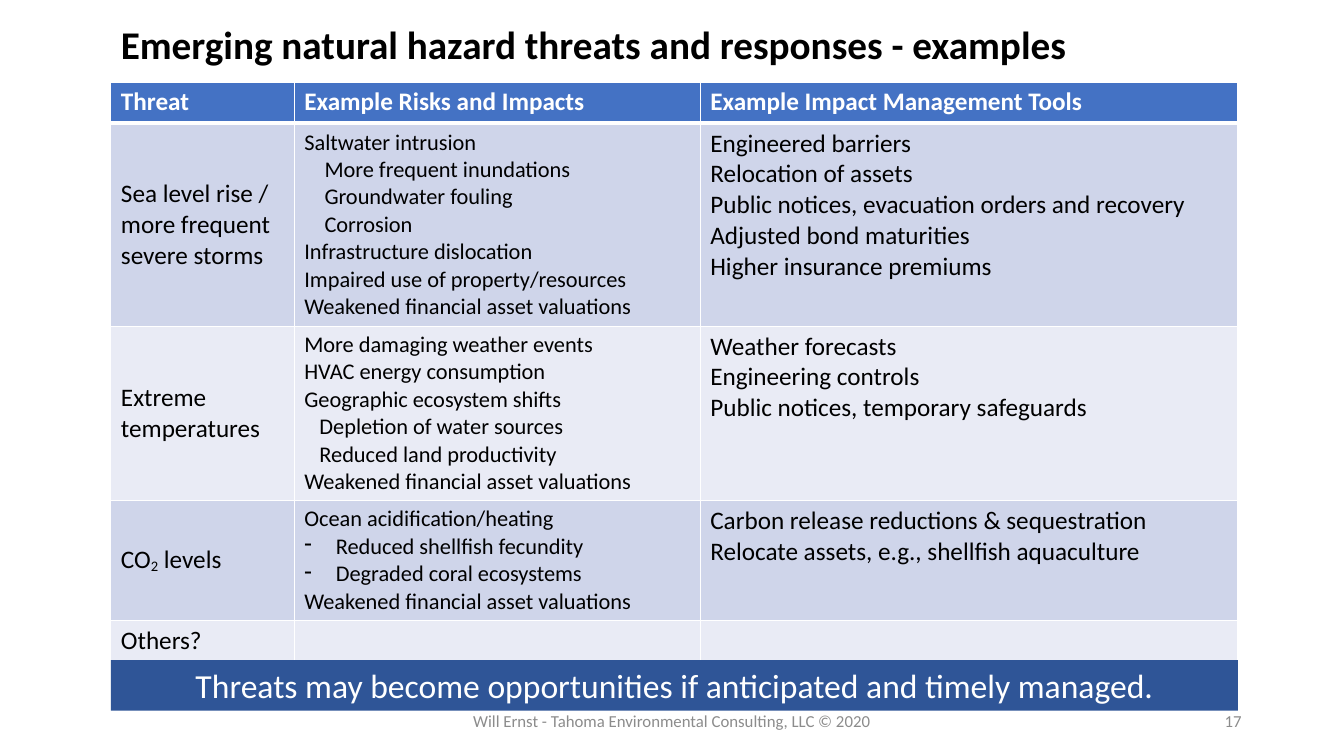
from lxml import etree
from pptx import Presentation
from pptx import util as u
from pptx.dml.color import RGBColor
from pptx.enum import shapes, text
from pptx.oxml import ns

COLORS = {
    "black": "000000", "white": "FFFFFF", "header": "4472C4",
    "band_dark": "CFD5EA", "band_light": "E9EBF5",
    "banner": "2F5597", "footer": "8C8C8C",
}
FONT = "Calibri"
LEFT, TABLE_WIDTH = 79.2, 805
COLUMN_WIDTHS = [131, 290, 384]
ROW_HEIGHTS = [29.5, 145, 124.5, 85.5, 29.5]
HEADINGS = ["Threat", "Example Risks and Impacts", "Example Impact Management Tools"]

# Each row: threat, risks, tools; a tuple gives text and paragraph format
ROWS = [
    (["Sea level rise / more frequent severe storms"],
     ["Saltwater intrusion",
      ("More frequent inundations", {"left": 14.4}),
      ("Groundwater fouling", {"left": 14.4}),
      ("Corrosion", {"left": 14.4}),
      "Infrastructure dislocation", "Impaired use of property/resources",
      "Weakened financial asset valuations"],
     ["Engineered barriers", "Relocation of assets",
      "Public notices, evacuation orders and recovery",
      "Adjusted bond maturities", "Higher insurance premiums"]),
    (["Extreme temperatures"],
     ["More damaging weather events", "HVAC energy consumption",
      "Geographic ecosystem shifts",
      ("Depletion of water sources", {"left": 10.8}),
      ("Reduced land productivity", {"left": 10.8}),
      "Weakened financial asset valuations"],
     ["Weather forecasts", "Engineering controls",
      "Public notices, temporary safeguards"]),
    ([("CO", {"subscript": "2", "rest": " levels"})],
     ["Ocean acidification/heating",
      ("Reduced shellfish fecundity", {"left": 22.5, "bullet": "-"}),
      ("Degraded coral ecosystems", {"left": 22.5, "bullet": "-"}),
      "Weakened financial asset valuations"],
     ["Carbon release reductions & sequestration",
      "Relocate assets, e.g., shellfish aquaculture"]),
    (["Others?"], [], []),
]


def rgb(name):
    return RGBColor.from_string(COLORS[name])


def write(paragraph, content, size=18, color="black", bold=False, align=None,
          left=0, bullet=None, subscript="", rest=""):
    """Write formatted text into a paragraph."""
    properties = paragraph._p.get_or_add_pPr()
    if left:
        properties.set("marL", str(u.Pt(left)))
        properties.set("indent", str(-u.Pt(left) if bullet else 0))
    if bullet:
        etree.SubElement(properties, ns.qn("a:buChar"), char=bullet)
    if align is not None:
        paragraph.alignment = align
    for part in filter(None, (content, subscript, rest)):
        run = paragraph.add_run()
        run.text = part
        run.font.name, run.font.size, run.font.bold = FONT, u.Pt(size), bold
        run.font.color.rgb = rgb(color)
        if part == subscript:
            run._r.get_or_add_rPr().set("baseline", "-11000")


def add_text_box(slide, left, top, width, height, content, **text_format):
    box = slide.shapes.add_textbox(u.Pt(left), u.Pt(top), u.Pt(width), u.Pt(height))
    frame = box.text_frame
    frame.word_wrap = True
    frame.vertical_anchor = text.MSO_ANCHOR.MIDDLE
    write(frame.paragraphs[0], content, **text_format)
    return box


def add_banner(slide, left, top, width, height, content):
    banner = slide.shapes.add_shape(shapes.MSO_SHAPE.RECTANGLE, u.Pt(left), u.Pt(top),
                                    u.Pt(width), u.Pt(height))
    banner.shadow.inherit = False
    banner.fill.solid()
    banner.fill.fore_color.rgb = rgb("banner")
    banner.line.fill.background()
    frame = banner.text_frame
    frame.word_wrap = True
    frame.vertical_anchor = text.MSO_ANCHOR.TOP
    write(frame.paragraphs[0], content, size=24, color="white",
          align=text.PP_ALIGN.CENTER)


def set_borders(cell, bottom):
    """Give a cell white borders; bottom is the width of the lower one."""
    properties = cell._tc.get_or_add_tcPr()
    for side, width in (("L", 1), ("R", 1), ("T", 1), ("B", bottom)):
        line = etree.SubElement(properties, ns.qn("a:ln" + side), w=str(u.Pt(width)))
        fill = etree.SubElement(line, ns.qn("a:solidFill"))
        etree.SubElement(fill, ns.qn("a:srgbClr"), val=COLORS["white"])


def fill_cell(cell, items, fill, anchor, bottom=1, **text_format):
    set_borders(cell, bottom)
    cell.fill.solid()
    cell.fill.fore_color.rgb = rgb(fill)
    cell.vertical_anchor = anchor
    frame = cell.text_frame
    for index, item in enumerate(items):
        content, extra = item if isinstance(item, tuple) else (item, {})
        paragraph = frame.add_paragraph() if index else frame.paragraphs[0]
        write(paragraph, content, **text_format, **extra)


def add_threat_table(slide):
    table = slide.shapes.add_table(len(ROW_HEIGHTS), len(COLUMN_WIDTHS), u.Pt(LEFT),
                                   u.Pt(58.5), u.Pt(TABLE_WIDTH),
                                   u.Pt(sum(ROW_HEIGHTS))).table
    for column, width in zip(table.columns, COLUMN_WIDTHS):
        column.width = u.Pt(width)
    for row, height in zip(table.rows, ROW_HEIGHTS):
        row.height = u.Pt(height)

    # Header row
    top, middle = text.MSO_ANCHOR.TOP, text.MSO_ANCHOR.MIDDLE
    for column, heading in enumerate(HEADINGS):
        fill_cell(table.cell(0, column), [heading], "header", top, bottom=3,
                  color="white", bold=True)

    # Banded body rows
    for row, cells in enumerate(ROWS, start=1):
        fill = "band_dark" if row % 2 else "band_light"
        for column, items in enumerate(cells):
            fill_cell(table.cell(row, column), items, fill,
                      top if column == 2 else middle, size=16 if column == 1 else 18)


def main():
    presentation = Presentation()
    presentation.slide_width, presentation.slide_height = u.Pt(960), u.Pt(540)
    slide = presentation.slides.add_slide(presentation.slide_layouts[6])

    # Title
    title = add_text_box(slide, LEFT, 11.5, 828, 44,
                         "Emerging natural hazard threats and responses - examples",
                         size=28, bold=True)
    title.text_frame.paragraphs[0].line_spacing = 0.9

    # Table and closing message
    add_threat_table(slide)
    add_banner(slide, LEFT, 471.6, TABLE_WIDTH, 36,
               "Threats may become opportunities if anticipated and timely managed.")

    # Footer and slide number
    add_text_box(slide, 318, 500.5, 324, 28.75,
                 "Will Ernst - Tahoma Environmental Consulting, LLC © 2020",
                 size=12, color="footer", align=text.PP_ALIGN.CENTER)
    add_text_box(slide, 678, 500.5, 216, 28.75, "17",
                 size=12, color="footer", align=text.PP_ALIGN.RIGHT)

    presentation.save("out.pptx")


if __name__ == "__main__":
    main()
